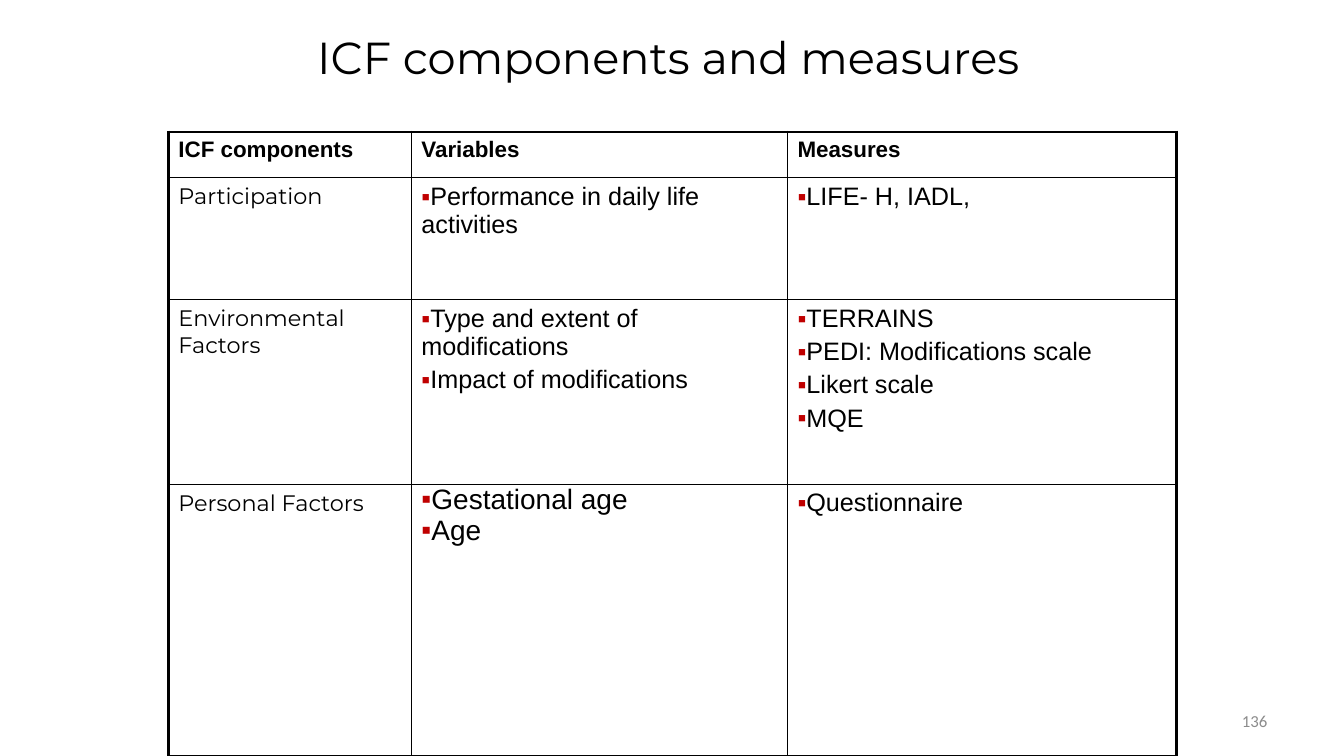
from dataclasses import dataclass

import pptx
import pptx.dml.color
import pptx.enum.text
import pptx.oxml
import pptx.oxml.ns
import pptx.util
from lxml import etree

Inches = pptx.util.Inches
Pt = pptx.util.Pt
Align = pptx.enum.text.PP_ALIGN
Anchor = pptx.enum.text.MSO_ANCHOR
qn = pptx.oxml.ns.qn


@dataclass(frozen=True)
class Theme:
    ink: str = "000000"
    bullet: str = "C00000"
    page_number: str = "8C8C8C"
    heading_font: str = "Montserrat"
    body_font: str = "Arial"
    number_font: str = "Calibri"
    title_size: int = 32
    label_size: int = 16
    entry_size: int = 18
    large_entry_size: int = 20
    number_size: int = 12
    outer_line: float = 2.25
    inner_line: float = 1


@dataclass(frozen=True)
class Entry:
    lines: tuple[str, ...]
    size: int
    spacing: float | None = None


@dataclass(frozen=True)
class Component:
    name: str
    height: float
    variables: Entry
    measures: Entry


THEME = Theme()
HEADINGS = ("ICF components", "Variables", "Measures")
HEADING_HEIGHT = 0.45
COLUMN_WIDTHS = (2.41, 3.73, 3.86)
COMPONENTS = (
    Component(
        "Participation", 1.21,
        Entry(("Performance in daily life activities",), THEME.entry_size),
        Entry(("LIFE- H, IADL,",), THEME.entry_size),
    ),
    Component(
        "Environmental Factors", 1.84,
        Entry(("Type and extent of modifications", "Impact of modifications"), THEME.entry_size),
        Entry(("TERRAINS", "PEDI: Modifications scale", "Likert scale", "MQE"), THEME.entry_size),
    ),
    Component(
        "Personal Factors", 2.69,
        Entry(("Gestational age", "Age"), THEME.large_entry_size, 0.8),
        Entry(("Questionnaire",), THEME.entry_size, 0.95),
    ),
)


def add_bullet(paragraph) -> None:
    properties = paragraph._p.get_or_add_pPr()
    properties.set("marL", "0")
    properties.set("indent", "0")
    bullet_color = etree.SubElement(properties, qn("a:buClr"))
    etree.SubElement(bullet_color, qn("a:srgbClr"), val=THEME.bullet)
    etree.SubElement(properties, qn("a:buFont"), typeface=THEME.body_font)
    etree.SubElement(properties, qn("a:buChar"), char="▪")


def write_text(frame, *lines: str, size: int, font: str, color: str = THEME.ink,
               bold: bool = False, align=Align.LEFT, bulleted: bool = False,
               spacing: float | None = None) -> None:
    frame.word_wrap = True
    for index, line in enumerate(lines):
        paragraph = frame.add_paragraph() if index else frame.paragraphs[0]
        paragraph.alignment = align
        if spacing:
            paragraph.line_spacing = spacing
        if index:
            paragraph.space_before = Pt(size * 0.2)
        if bulleted:
            add_bullet(paragraph)
        run = paragraph.add_run()
        run.text = line
        run.font.size = Pt(size)
        run.font.name = font
        run.font.bold = bold
        run.font.color.rgb = pptx.dml.color.RGBColor.from_string(color)


def set_borders(cell, row: int, column: int) -> None:
    cell.fill.background()
    properties = cell._tc.get_or_add_tcPr()
    on_edge = {
        "a:lnL": column == 0,
        "a:lnR": column == len(HEADINGS) - 1,
        "a:lnT": row == 0,
        "a:lnB": row == len(COMPONENTS),
    }
    for position, (side, outer) in enumerate(on_edge.items()):
        width = Pt(THEME.outer_line if outer else THEME.inner_line)
        border = etree.Element(qn(side), w=str(int(width)))
        line_fill = etree.SubElement(border, qn("a:solidFill"))
        etree.SubElement(line_fill, qn("a:srgbClr"), val=THEME.ink)
        properties.insert(position, border)


def add_measures_table(slide) -> None:
    heights = (HEADING_HEIGHT, *(component.height for component in COMPONENTS))
    table = slide.shapes.add_table(
        len(heights), len(HEADINGS), Inches(1.67), Inches(1.31),
        Inches(sum(COLUMN_WIDTHS)), Inches(sum(heights))).table
    table.first_row = False
    table.horz_banding = False
    for column, width in zip(table.columns, COLUMN_WIDTHS):
        column.width = Inches(width)
    for row, height in zip(table.rows, heights):
        row.height = Inches(height)
    for column, heading in enumerate(HEADINGS):
        write_text(table.cell(0, column).text_frame, heading,
                   size=THEME.label_size, font=THEME.body_font, bold=True)
    for row, component in enumerate(COMPONENTS, start=1):
        write_text(table.cell(row, 0).text_frame, component.name,
                   size=THEME.label_size, font=THEME.heading_font)
        for column, entry in enumerate((component.variables, component.measures), start=1):
            write_text(table.cell(row, column).text_frame, *entry.lines, size=entry.size,
                       font=THEME.body_font, bulleted=True, spacing=entry.spacing)
    for row in range(len(heights)):
        for column in range(len(HEADINGS)):
            set_borders(table.cell(row, column), row, column)


def main() -> None:
    presentation = pptx.Presentation()
    presentation.slide_width = Inches(13.33)
    presentation.slide_height = Inches(7.5)
    slide = presentation.slides.add_slide(presentation.slide_layouts[6])

    page_number = slide.shapes.add_textbox(
        Inches(9.56), Inches(6.95), Inches(3.11), Inches(0.4)).text_frame
    page_number.vertical_anchor = Anchor.MIDDLE
    write_text(page_number, "136", size=THEME.number_size, font=THEME.number_font,
               color=THEME.page_number, align=Align.RIGHT)

    add_measures_table(slide)

    title = slide.shapes.add_textbox(
        Inches(2.17), Inches(0.25), Inches(8.92), Inches(0.64)).text_frame
    write_text(title, "ICF components and measures", size=THEME.title_size,
               font=THEME.heading_font, align=Align.CENTER)

    presentation.save("out.pptx")


if __name__ == "__main__":
    main()
